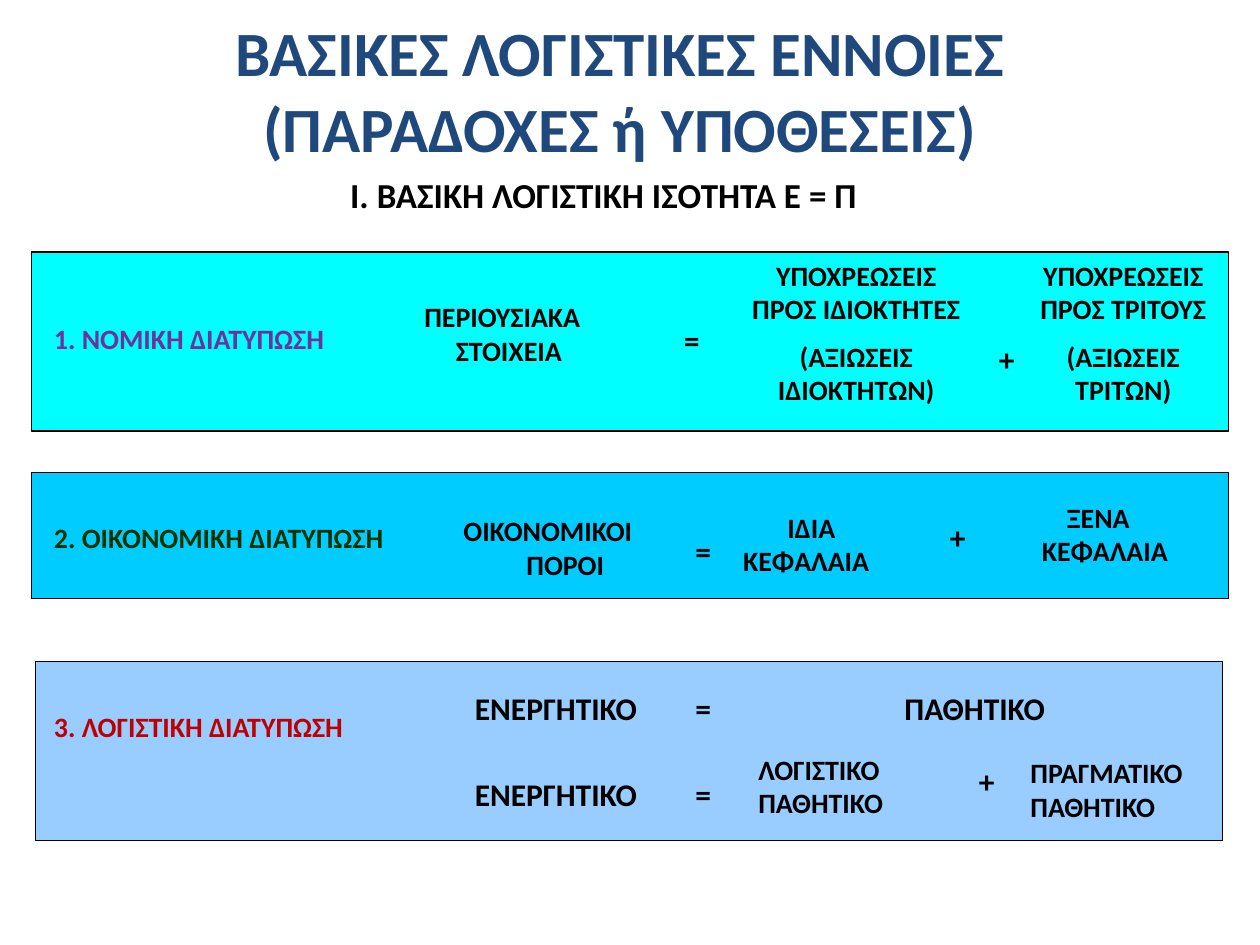
from copy import deepcopy
from dataclasses import dataclass

from pptx import Presentation
from pptx.dml.color import RGBColor
from pptx.enum.shapes import MSO_SHAPE as Shape
from pptx.enum.text import MSO_ANCHOR as Anchor, MSO_AUTO_SIZE as AutoSize, PP_ALIGN as Align
from pptx.oxml.ns import qn
from pptx.util import Inches, Pt


@dataclass(frozen=True)
class Theme:
    font: str = "Calibri"
    title: str = "1F497D"
    ink: str = "000000"
    legal: str = "7030A0"
    economic: str = "003300"
    accounting: str = "C00000"
    legal_fill: str = "00FFFF"
    economic_fill: str = "00CCFF"
    accounting_fill: str = "99CCFF"
    title_size: int = 36
    subtitle_size: int = 20
    sign_size: int = 18
    term_size: int = 16
    paragraph_gap: int = 8


THEME = Theme()


@dataclass(frozen=True)
class Panel:
    left: float
    top: float
    width: float
    height: float
    fill: str


@dataclass(frozen=True)
class Label:
    """Text at a place in inches; first and rest indent its lines."""
    text: str
    left: float
    top: float
    width: float
    height: float = 0.64
    size: int = THEME.term_size
    color: str = THEME.ink
    align: Align = Align.LEFT
    first: float = 0
    rest: float = 0


def heading(text: str, top: float, color: str) -> Label:
    return Label(text, 0.33, top, 3.33, 0.37, color=color)


def sign(text: str, left: float, top: float, width: float = 0.42) -> Label:
    return Label(text, left, top, width, 0.4, THEME.sign_size)


def obligations(text: str, left: float, width: float) -> Label:
    return Label(text, left, 2, width, 1.3, align=Align.CENTER)


TITLE = Label("ΒΑΣΙΚΕΣ ΛΟΓΙΣΤΙΚΕΣ ΕΝΝΟΙΕΣ\v(ΠΑΡΑΔΟΧΕΣ ή ΥΠΟΘΕΣΕΙΣ)", 0.67, 0.17, 8.5, 1.08,
              THEME.title_size, THEME.title, Align.CENTER)

PANELS = [
    Panel(0.25, 2, 9.5, 1.42, THEME.legal_fill),
    Panel(0.25, 3.75, 9.5, 1, THEME.economic_fill),
    Panel(0.28, 5.25, 9.42, 1.42, THEME.accounting_fill),
]

LABELS = [
    Label("Ι. ΒΑΣΙΚΗ ΛΟΓΙΣΤΙΚΗ ΙΣΟΤΗΤΑ Ε = Π", 0.79, 1.33, 8, 0.43,
          THEME.subtitle_size, align=Align.CENTER),
    # Legal wording
    heading("1. ΝΟΜΙΚΗ ΔΙΑΤΥΠΩΣΗ", 2.5, THEME.legal),
    Label("ΠΕΡΙΟΥΣΙΑΚΑ\vΣΤΟΙΧΕΙΑ", 3.27, 2.33, 2.07, rest=0.25),
    sign("=", 5.33, 2.5),
    obligations("ΥΠΟΧΡΕΩΣΕΙΣ\vΠΡΟΣ ΙΔΙΟΚΤΗΤΕΣ\n(ΑΞΙΩΣΕΙΣ ΙΔΙΟΚΤΗΤΩΝ)", 5.67, 2.25),
    sign("+", 7.83, 2.65),
    obligations("ΥΠΟΧΡΕΩΣΕΙΣ\vΠΡΟΣ ΤΡΙΤΟΥΣ\n(ΑΞΙΩΣΕΙΣ\vΤΡΙΤΩΝ)", 8, 1.83),
    # Economic wording
    heading("2. ΟΙΚΟΝΟΜΙΚΗ ΔΙΑΤΥΠΩΣΗ", 4.08, THEME.economic),
    Label("ΟΙΚΟΝΟΜΙΚΟΙ\vΠΟΡΟΙ", 3.58, 4.03, 2.5, rest=0.5),
    sign("=", 5.42, 4.17),
    Label("ΙΔΙΑ\vΚΕΦΑΛΑΙΑ", 5.75, 4, 2.67, first=0.4, rest=0.05),
    sign("+", 7.44, 4.06),
    Label("ΞΕΝΑ\vΚΕΦΑΛΑΙΑ", 8.17, 3.92, 1.83, first=0.2),
    # Accounting wording
    heading("3. ΛΟΓΙΣΤΙΚΗ ΔΙΑΤΥΠΩΣΗ", 5.58, THEME.accounting),
    sign("ΕΝΕΡΓΗΤΙΚΟ", 3.67, 5.42, 2.25),
    sign("=", 5.42, 5.42),
    sign("ΠΑΘΗΤΙΚΟ", 7.08, 5.42, 2.5),
    sign("ΕΝΕΡΓΗΤΙΚΟ", 3.67, 6.1, 2.17),
    sign("=", 5.42, 6.1),
    Label("ΛΟΓΙΣΤΙΚΟ\vΠΑΘΗΤΙΚΟ", 5.92, 5.92, 1.58),
    sign("+", 7.67, 6),
    Label("ΠΡΑΓΜΑΤΙΚΟ\vΠΑΘΗΤΙΚΟ", 8.08, 5.95, 1.75),
]


def place(item: Label | Panel) -> list[Inches]:
    return [Inches(value) for value in (item.left, item.top, item.width, item.height)]


def write(box, label: Label, anchor: Anchor, auto_size: AutoSize) -> None:
    frame = box.text_frame
    frame.text = label.text
    frame_format = {"word_wrap": True, "vertical_anchor": anchor, "auto_size": auto_size}
    for name, value in frame_format.items():
        setattr(frame, name, value)
    font_format = {"name": THEME.font, "size": Pt(label.size), "bold": True}
    for index, para in enumerate(frame.paragraphs):
        para.alignment = label.align
        para.space_before = Pt(THEME.paragraph_gap if index else 0)
        if label.first or label.rest:
            properties = para._p.get_or_add_pPr()
            properties.set("marL", str(Inches(label.rest)))
            properties.set("indent", str(Inches(label.first - label.rest)))
        for span in para.runs:
            for name, value in font_format.items():
                setattr(span.font, name, value)
            span.font.color.rgb = RGBColor.from_string(label.color)
        # A line break needs the run format too, or it takes the default size
        for line_break in para._p.findall(qn("a:br")):
            line_break.append(deepcopy(para.runs[0]._r.find(qn("a:rPr"))))


def draw_title(page, label: Label) -> None:
    box = page.shapes.title
    for name, value in zip(("left", "top", "width", "height"), place(label)):
        setattr(box, name, value)
    write(box, label, Anchor.MIDDLE, AutoSize.NONE)


def draw_panel(page, panel: Panel) -> None:
    box = page.shapes.add_shape(Shape.RECTANGLE, *place(panel))
    box.shadow.inherit = False
    box.fill.solid()
    box.fill.fore_color.rgb = RGBColor.from_string(panel.fill)
    box.line.color.rgb = RGBColor.from_string(THEME.ink)
    box.line.width = Pt(0.75)


def draw_label(page, label: Label) -> None:
    box = page.shapes.add_textbox(*place(label))
    write(box, label, Anchor.TOP, AutoSize.SHAPE_TO_FIT_TEXT)


def main() -> None:
    deck = Presentation()
    deck.slide_width, deck.slide_height = Inches(10), Inches(7.5)
    page = deck.slides.add_slide(deck.slide_layouts.get_by_name("Title Only"))
    draw_title(page, TITLE)
    for panel in PANELS:
        draw_panel(page, panel)
    for label in LABELS:
        draw_label(page, label)
    deck.save("out.pptx")


if __name__ == "__main__":
    main()
